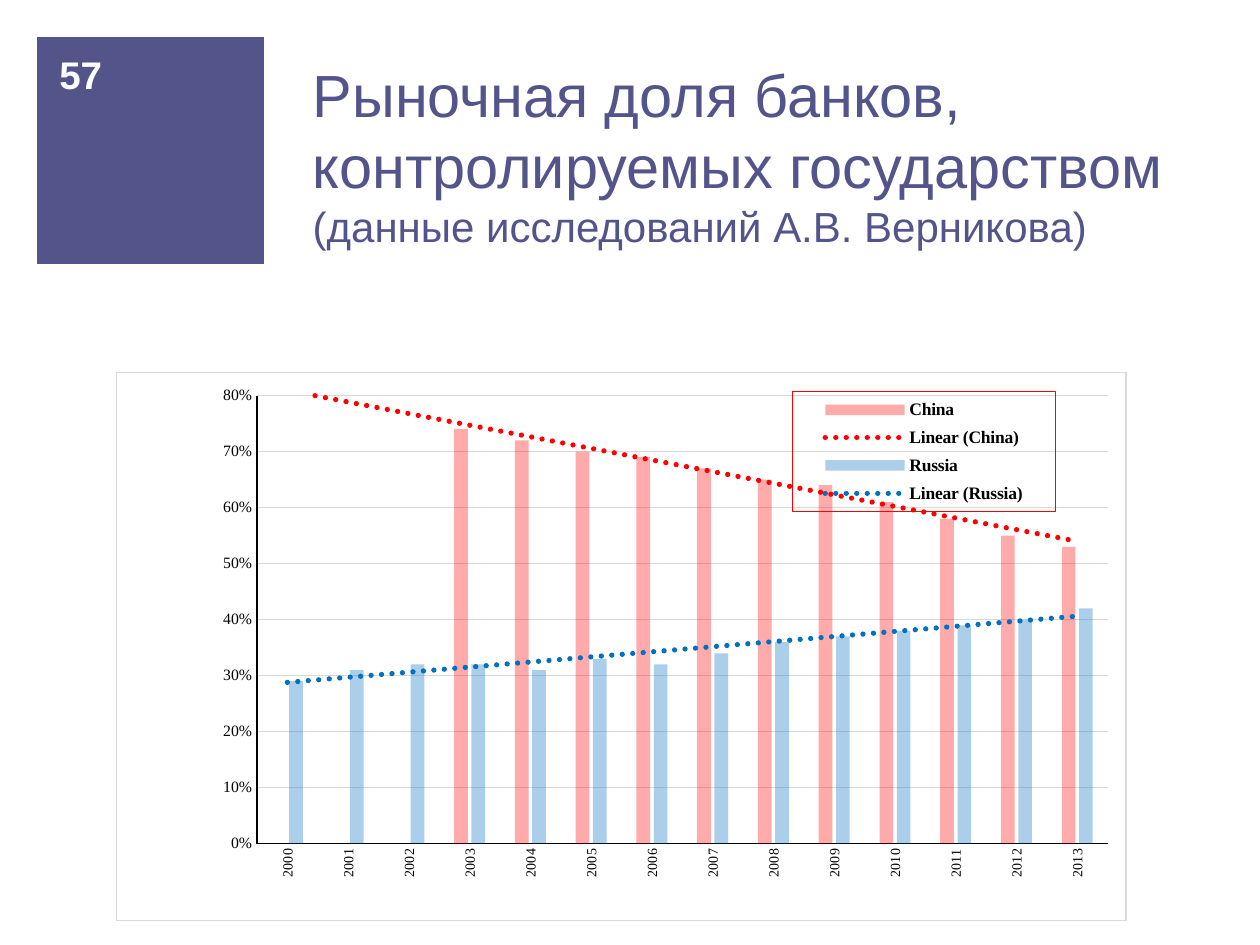
from lxml import etree
from pptx import Presentation
from pptx.chart import data
from pptx.dml.color import RGBColor
from pptx.enum import chart as charts, shapes, text
from pptx.oxml import parse_xml
from pptx.oxml.ns import nsdecls, qn
from pptx.util import Cm, Pt

INDIGO = RGBColor(0x53, 0x54, 0x8A)
WHITE = RGBColor(0xFF, 0xFF, 0xFF)
BLACK = RGBColor(0, 0, 0)
GREY = RGBColor(0xD9, 0xD9, 0xD9)
RED = RGBColor(0xFF, 0, 0)
BLUE = RGBColor(0, 0x70, 0xC0)
SERIF = "Times New Roman"

YEARS = [str(year) for year in range(2000, 2014)]
CHINA = [None] * 3 + [0.74, 0.72, 0.7, 0.69, 0.67, 0.65, 0.64, 0.61, 0.58, 0.55, 0.53]
RUSSIA = [0.29, 0.31, 0.32, 0.32, 0.31, 0.33, 0.32,
          0.34, 0.36, 0.37, 0.38, 0.39, 0.4, 0.42]


def set_font(font, size, color=BLACK, name="Arial", bold=False):
    font.name, font.size, font.bold = name, Pt(size), bold
    font.color.rgb = color


def write_text(frame, lines, align=text.PP_ALIGN.LEFT,
               anchor=text.MSO_ANCHOR.MIDDLE, **style):
    """Write (wording, size) lines into one paragraph, split by line breaks."""
    frame.word_wrap = True
    frame.auto_size = text.MSO_AUTO_SIZE.NONE
    frame.vertical_anchor = anchor
    para = frame.paragraphs[0]
    para.alignment = align
    for index, (wording, size) in enumerate(lines):
        if index:
            para.add_line_break()
        span = para.add_run()
        span.text = wording
        set_font(span.font, size, **style)


def add_header(page, left, top, width, height):
    # Square with the page number
    square = page.shapes.add_shape(shapes.MSO_SHAPE.RECTANGLE, left, top, height, height)
    square.shadow.inherit = False
    square.fill.solid()
    square.fill.fore_color.rgb = INDIGO
    square.line.fill.background()
    number = page.shapes.add_textbox(left + Cm(0.16), top + Cm(0.24), Cm(1.4), Cm(1.02))
    write_text(number.text_frame, [("57", 22)], align=text.PP_ALIGN.RIGHT,
               color=WHITE, bold=True)

    # Title
    title = page.shapes.title
    indent = Cm(5.3)
    title.left, title.top = left + indent, top + Cm(1.26)
    title.width, title.height = width - indent, Cm(3.18)
    write_text(title.text_frame,
               [("Рыночная доля банков, контролируемых государством", 34),
                ("(данные исследований А.В. Верникова)", 24)],
               anchor=text.MSO_ANCHOR.BOTTOM, color=INDIGO)


def make_layout(x, y, w, h, inner=False):
    target = '<c:layoutTarget val="inner"/>' if inner else ""
    return parse_xml(
        f'<c:layout {nsdecls("c")}><c:manualLayout>{target}'
        '<c:xMode val="edge"/><c:yMode val="edge"/>'
        f'<c:x val="{x}"/><c:y val="{y}"/><c:w val="{w}"/><c:h val="{h}"/>'
        '</c:manualLayout></c:layout>')


def make_frame(color, fill="<a:noFill/>"):
    return parse_xml(
        f'<c:spPr {nsdecls("c", "a")}>{fill}<a:ln w="9525"><a:solidFill>'
        f'<a:srgbClr val="{color}"/></a:solidFill></a:ln></c:spPr>')


def style_series(series, color, backward=0):
    """Fill the bars at 33 % opacity and add a dotted linear trend."""
    series.format.fill.solid()
    series.format.fill.fore_color.rgb = color
    shade = series.format.fill._xPr.find(".//" + qn("a:srgbClr"))
    etree.SubElement(shade, qn("a:alpha"), val="33000")
    extend = f'<c:backward val="{backward}"/>' if backward else ""
    trend = parse_xml(
        f'<c:trendline {nsdecls("c", "a")}><c:name>Linear ({series.name})</c:name>'
        f'<c:spPr><a:ln w="38100" cap="rnd"><a:solidFill><a:srgbClr val="{color}"/>'
        '</a:solidFill><a:prstDash val="sysDot"/></a:ln></c:spPr>'
        f'<c:trendlineType val="linear"/>{extend}'
        '<c:dispRSqr val="0"/><c:dispEq val="0"/></c:trendline>')
    series._element.find(qn("c:cat")).addprevious(trend)


def style_axis(axis, size):
    axis.major_tick_mark = axis.minor_tick_mark = charts.XL_TICK_MARK.NONE
    axis.format.line.color.rgb = BLACK
    axis.format.line.width = Pt(0.75)
    set_font(axis.tick_labels.font, size, name=SERIF)


def add_share_chart(page, left, top, width, height):
    shares = data.CategoryChartData(number_format="0%")
    shares.categories = YEARS
    shares.add_series("China", CHINA)
    shares.add_series("Russia", RUSSIA)
    chart = page.shapes.add_chart(charts.XL_CHART_TYPE.COLUMN_CLUSTERED,
                                  left, top, width, height, shares).chart
    set_font(chart.font, 10)
    chart.has_title = False
    space = chart._chartSpace
    white = f'<a:solidFill><a:srgbClr val="{WHITE}"/></a:solidFill>'
    space.find(qn("c:chart")).addnext(make_frame(GREY, white))

    # Bars and trends; the first trend reaches back over the missing years
    plot = chart.plots[0]
    plot.vary_by_categories = False
    plot.gap_width, plot.overlap = 219, -27
    style_series(plot.series[0], RED, backward=CHINA.count(None))
    style_series(plot.series[1], BLUE)
    area = space.find(".//" + qn("c:plotArea"))
    for old in area.findall(qn("c:layout")):
        area.remove(old)
    area.insert(0, make_layout(0.139, 0.042, 0.843, 0.818, inner=True))

    # Axes
    style_axis(chart.category_axis, 8)
    labels = chart.category_axis._element.find(qn("c:txPr"))
    labels.find(qn("a:bodyPr")).set("rot", "-5400000")
    scale = chart.value_axis
    style_axis(scale, 9)
    scale.minimum_scale, scale.maximum_scale, scale.major_unit = 0, 0.8, 0.1
    scale.tick_labels.number_format = "0%"
    scale.tick_labels.number_format_is_linked = False
    scale.major_gridlines.format.line.color.rgb = GREY
    scale.major_gridlines.format.line.width = Pt(0.75)

    # Legend in a red frame over the plot
    chart.has_legend = True
    legend = chart.legend
    legend.position = charts.XL_LEGEND_POSITION.BOTTOM
    legend.include_in_layout = False
    set_font(legend.font, 10, name=SERIF, bold=True)
    element = legend._element
    for old in element.findall(qn("c:layout")):
        element.remove(old)
    element.find(qn("c:legendPos")).addnext(make_layout(0.67, 0.035, 0.26, 0.218))
    element.find(qn("c:txPr")).addprevious(make_frame(RED))


def main():
    deck = Presentation()
    deck.slide_width, deck.slide_height = Cm(25.4), Cm(19.05)
    page = deck.slides.add_slide(deck.slide_layouts[5])
    add_header(page, Cm(0.75), Cm(0.75), Cm(23.38), Cm(4.57))
    add_share_chart(page, Cm(2.34), Cm(7.5), Cm(20.37), Cm(11.07))
    deck.save("out.pptx")


if __name__ == "__main__":
    main()
